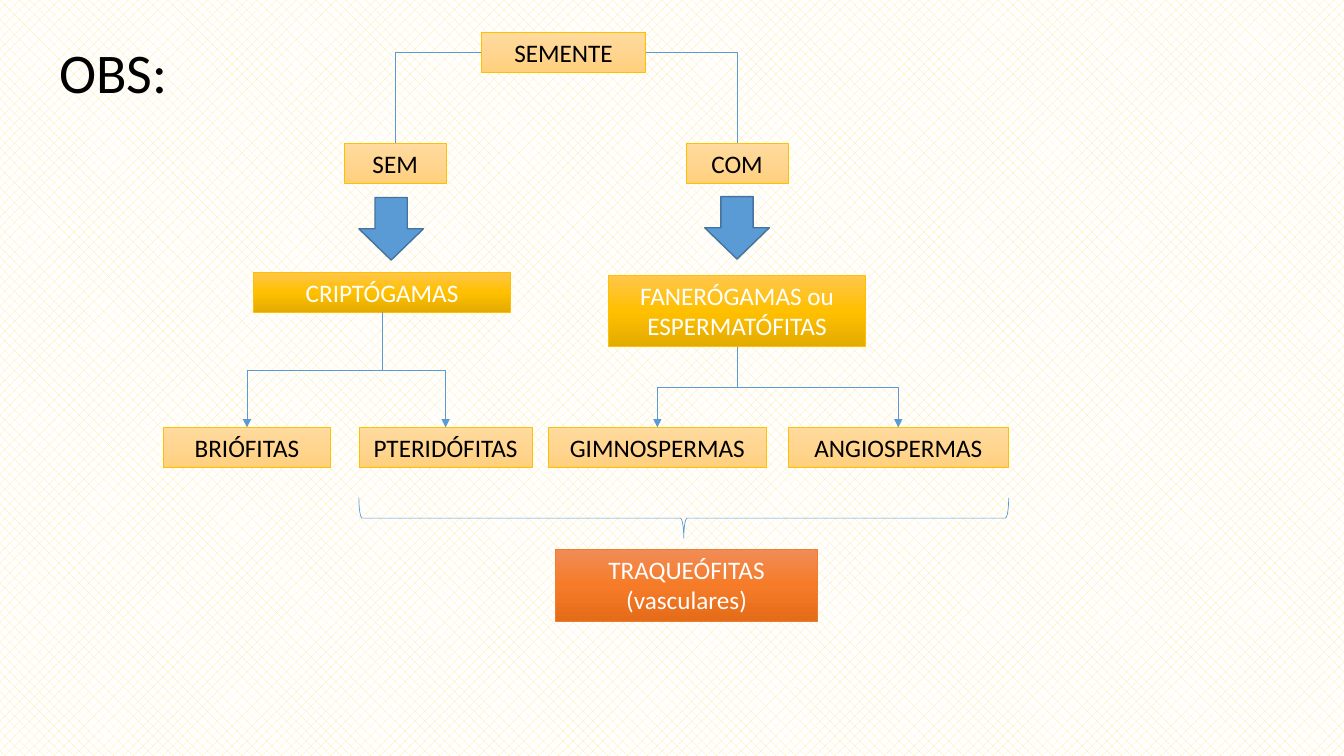
from copy import deepcopy
from dataclasses import dataclass

from lxml.etree import SubElement
from pptx import Presentation
from pptx.dml.color import RGBColor
from pptx.enum.dml import MSO_PATTERN
from pptx.enum.shapes import MSO_CONNECTOR, MSO_SHAPE
from pptx.enum.text import MSO_ANCHOR, PP_ALIGN
from pptx.oxml.ns import qn
from pptx.util import Inches, Pt

# Content: text, column (centre), row (top), width, style
HEADING = "OBS:"
BOXES = [
    ("SEMENTE", "seed", "root", 1.63, "pale"),
    ("SEM", "without", "choice", 1.01, "pale"),
    ("COM", "with", "choice", 1.01, "pale"),
    ("CRIPTÓGAMAS", "cryptogams", "group_left", 2.55, "gold"),
    ("FANERÓGAMAS ou ESPERMATÓFITAS", "with", "group_right", 2.55, "gold"),
    ("BRIÓFITAS", "bryophytes", "leaf", 1.66, "pale"),
    ("PTERIDÓFITAS", "pteridophytes", "leaf", 1.72, "pale"),
    ("GIMNOSPERMAS", "gymnosperms", "leaf", 2.16, "pale"),
    ("ANGIOSPERMAS", "angiosperms", "leaf", 2.19, "pale"),
    ("TRAQUEÓFITAS (vasculares)", "vascular", "vascular", 2.6, "orange"),
]
SEED_BRANCHES = [("SEMENTE", "SEM"), ("SEMENTE", "COM")]
GROUP_BRANCHES = [
    ("CRIPTÓGAMAS", "BRIÓFITAS"),
    ("CRIPTÓGAMAS", "PTERIDÓFITAS"),
    ("FANERÓGAMAS ou ESPERMATÓFITAS", "ANGIOSPERMAS"),
    ("FANERÓGAMAS ou ESPERMATÓFITAS", "GIMNOSPERMAS"),
]
BLOCK_ARROWS = [("without_arrow", 1.96), ("with", 1.95)]
BRACED = ("PTERIDÓFITAS", "ANGIOSPERMAS")

# Grid in inches
SLIDE_W, SLIDE_H = 13.33, 7.5
COLUMNS = {
    "seed": 5.59, "without": 3.92, "without_arrow": 3.88, "with": 7.31,
    "cryptogams": 3.79, "bryophytes": 2.45, "pteridophytes": 4.42,
    "gymnosperms": 6.52, "angiosperms": 8.91, "vascular": 6.81,
}
ROWS = {"root": 0.32, "choice": 1.42, "group_left": 2.7, "group_right": 2.73,
        "leaf": 4.24, "brace": 4.94, "vascular": 5.45}
ONE_LINE, TWO_LINES = 0.4, 0.71
ARROW_W, ARROW_H, BRACE_DEPTH = 0.64, 0.62, 0.4
TOP, LEFT, BOTTOM, RIGHT = range(4)  # connection sites of a rectangle


@dataclass(frozen=True)
class Theme:
    font: str = "Calibri"
    heading_size: int = 40
    box_size: int = 18
    dark: str = "000000"
    blue: str = "5B9BD5"
    blue_edge: str = "43739E"
    paper: str = "FFFFFF"
    weave: str = "FFE699"


THEME = Theme()
# Gradient stops, edge and text colour of each box style
STYLES = {
    "pale": (("FFDB9E", "FFD590", "FFD07C"), "FFC000", "000000"),
    "gold": (("FFC64B", "FFC000", "E3AB00"), "FFC000", "FFFFFF"),
    "orange": (("F18C57", "F67B28", "E56C19"), "ED7D31", "FFFFFF"),
}


def rgb(code):
    return RGBColor.from_string(code)


def write(shape, text, *, size, color, align, anchor):
    frame = shape.text_frame
    frame.word_wrap = True
    frame.vertical_anchor = anchor
    frame.margin_left = frame.margin_right = Inches(0.1)
    frame.margin_top = frame.margin_bottom = Inches(0.05)
    paragraph = frame.paragraphs[0]
    paragraph.alignment = align
    run = paragraph.add_run()
    run.text = text
    run.font.name, run.font.size = THEME.font, Pt(size)
    run.font.color.rgb = rgb(color)


def outline(shape, color, width=0.5):
    shape.line.color.rgb = rgb(color)
    shape.line.width = Pt(width)


def add_preset(slide, kind, center, top, width, height):
    shape = slide.shapes.add_shape(kind, Inches(center - width / 2), Inches(top),
                                   Inches(width), Inches(height))
    shape.shadow.inherit = False
    return shape


def shade(shape, colors):
    shape.fill.gradient()
    shape.fill.gradient_angle = 270
    stops = shape._element.spPr.find(".//" + qn("a:gsLst"))
    stops.insert(1, deepcopy(stops[0]))
    for stop, position, color in zip(shape.fill.gradient_stops, (0, 0.5, 1), colors):
        stop.position = position
        stop.color.rgb = rgb(color)


def add_box(slide, text, column, row, width, style):
    colors, edge, ink = STYLES[style]
    height = TWO_LINES if " " in text else ONE_LINE
    box = add_preset(slide, MSO_SHAPE.RECTANGLE, COLUMNS[column], ROWS[row], width, height)
    shade(box, colors)
    outline(box, edge)
    write(box, text, size=THEME.box_size, color=ink,
          align=PP_ALIGN.CENTER, anchor=MSO_ANCHOR.TOP)
    return box


def add_branch(slide, parent, child, from_group):
    """Bent line to the child's top: from a group's bottom, or from a side."""
    parent_x = parent.left + parent.width // 2
    child_x = child.left + child.width // 2
    leftward = child_x < parent_x
    site = BOTTOM if from_group else LEFT if leftward else RIGHT
    start_x = {BOTTOM: parent_x, LEFT: parent.left, RIGHT: parent.left + parent.width}[site]
    start_y = parent.top + (parent.height if from_group else parent.height // 2)
    across, down = abs(child_x - start_x), child.top - start_y

    branch = slide.shapes.add_connector(MSO_CONNECTOR.ELBOW, start_x, start_y,
                                        child_x, child.top)
    branch.begin_connect(parent, site)
    branch.end_connect(child, TOP)
    if from_group:
        width, height = down, across
        rotation, flip_h, flip_v = (90, 0, 0) if leftward else (270, 1, 0)
    else:
        width, height = across, down
        rotation, flip_h, flip_v = (180, 0, 1) if leftward else (0, 0, 0)
    branch.left = (start_x + child_x - width) // 2
    branch.top = (start_y + child.top - height) // 2
    branch.width, branch.height = width, height

    properties = branch._element.spPr
    frame = properties.find(qn("a:xfrm"))
    for name, value in (("rot", rotation * 60000), ("flipH", flip_h), ("flipV", flip_v)):
        frame.set(name, str(value))
    outline(branch, THEME.blue)
    if from_group:
        SubElement(properties.find(qn("a:ln")), qn("a:tailEnd"), type="triangle")
    else:
        properties.find(qn("a:prstGeom")).set("prst", "bentConnector2")
    SubElement(properties, qn("a:effectLst"))


def main():
    deck = Presentation()
    deck.slide_width, deck.slide_height = Inches(SLIDE_W), Inches(SLIDE_H)
    slide = deck.slides.add_slide(deck.slide_layouts[5])

    # Woven background
    background = slide.background.fill
    background.patterned()
    background.pattern = MSO_PATTERN.PERCENT_30
    background.fore_color.rgb = rgb(THEME.weave)
    background.back_color.rgb = rgb(THEME.paper)

    # Heading
    heading = slide.shapes.title
    heading.left, heading.top = Inches(0.49), Inches(ROWS["root"])
    heading.width, heading.height = Inches(2.02), Inches(0.77)
    write(heading, HEADING, size=THEME.heading_size, color=THEME.dark,
          align=PP_ALIGN.LEFT, anchor=MSO_ANCHOR.TOP)

    # Boxes and the branches between them
    boxes = {entry[0]: add_box(slide, *entry) for entry in BOXES}
    for branches, from_group in ((SEED_BRANCHES, False), (GROUP_BRANCHES, True)):
        for parent, child in branches:
            add_branch(slide, boxes[parent], boxes[child], from_group)

    # Block arrows
    for column, top in BLOCK_ARROWS:
        arrow = add_preset(slide, MSO_SHAPE.DOWN_ARROW, COLUMNS[column], top,
                           ARROW_W, ARROW_H)
        arrow.fill.solid()
        arrow.fill.fore_color.rgb = rgb(THEME.blue)
        outline(arrow, THEME.blue_edge, 1)

    # Brace under the vascular plants, turned to point down
    first, last = (boxes[name] for name in BRACED)
    left, right = first.left.inches, (last.left + last.width) / Inches(1)
    span = right - left
    brace = add_preset(slide, MSO_SHAPE.LEFT_BRACE, (left + right) / 2,
                       ROWS["brace"] + (BRACE_DEPTH - span) / 2, BRACE_DEPTH, span)
    brace.rotation = 270
    brace.fill.background()
    outline(brace, THEME.blue)

    deck.save("out.pptx")


if __name__ == "__main__":
    main()
